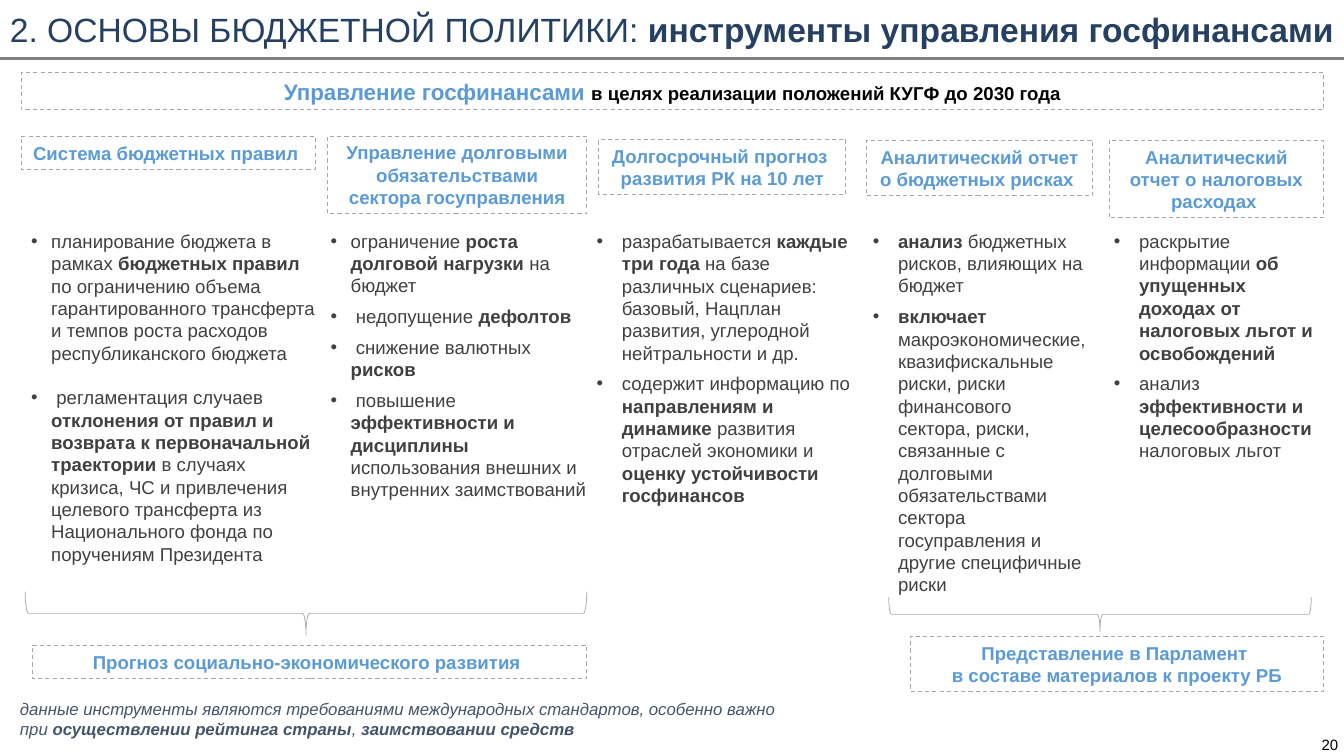
import pptx
import pptx.util
import pptx.dml.color
import pptx.enum.dml
import pptx.enum.shapes
import pptx.enum.text
import pptx.oxml.ns
from dataclasses import dataclass
from lxml import etree

SCALE = 9144
SHAPE = pptx.enum.shapes.MSO_SHAPE
ALIGN = pptx.enum.text.PP_ALIGN
ANCHOR = pptx.enum.text.MSO_ANCHOR


@dataclass(frozen=True)
class Theme:
    font: str = "Arial"
    navy: str = "254061"
    blue: str = "5B9BD5"
    gray: str = "404040"
    slate: str = "44546A"
    black: str = "000000"
    white: str = "FFFFFF"
    edge: str = "A6A6A6"
    rule: str = "808080"
    title: float = 24
    lead: float = 16
    body: float = 13.3
    note: float = 12
    page: float = 10.7


THEME = Theme()


def px(count):
    return pptx.util.Emu(count * SCALE)


def place(box):
    return [px(side) for side in box]


def rgb(code):
    return pptx.dml.color.RGBColor.from_string(code)


def bullet(para, indent):
    props = para._p.get_or_add_pPr()
    props.set("marL", str(px(indent)))
    props.set("indent", str(-px(indent)))
    tag = pptx.oxml.ns.qn
    tint = etree.SubElement(props, tag("a:buClr"))
    etree.SubElement(tint, tag("a:srgbClr"), val=THEME.gray)
    etree.SubElement(props, tag("a:buFont"), typeface=THEME.font)
    etree.SubElement(props, tag("a:buChar"), char="•")


def write(shape, lines, size=THEME.body, color=THEME.gray, bold=False,
          italic=False, align=ALIGN.LEFT, anchor=ANCHOR.TOP, after=0,
          lead=None, indent=0, mark=None):
    """Lines are paragraphs; parts between asterisks take the mark format."""
    frame = shape.text_frame
    frame.word_wrap = True
    frame.vertical_anchor = anchor
    base = dict(size=size, color=color, bold=bold)
    other = {**base, **(mark or {"bold": True})}
    for place_no, line in enumerate(lines):
        para = frame.add_paragraph() if place_no else frame.paragraphs[0]
        para.alignment = align
        para.space_after = pptx.util.Pt(after)
        if lead:
            para.line_spacing = lead
        if indent:
            bullet(para, indent)
        for part_no, part in enumerate(line.split("*")):
            if not part:
                continue
            look = other if part_no % 2 else base
            run = para.add_run()
            run.text = part
            run.font.name = THEME.font
            run.font.size = pptx.util.Pt(look["size"])
            run.font.bold = look["bold"]
            run.font.italic = italic
            run.font.color.rgb = rgb(look["color"])


def label(slide, box, lines, **form):
    write(slide.shapes.add_textbox(*place(box)), lines, **form)


def outline(shape, width):
    shape.shadow.inherit = False
    shape.line.color.rgb = rgb(THEME.edge)
    shape.line.width = pptx.util.Pt(width)


def frame(slide, box, lines, **form):
    shape = slide.shapes.add_shape(SHAPE.RECTANGLE, *place(box))
    outline(shape, 0.75)
    shape.line.dash_style = pptx.enum.dml.MSO_LINE.DASH
    shape.fill.solid()
    shape.fill.fore_color.rgb = rgb(THEME.white)
    write(shape, lines, color=THEME.blue, bold=True, align=ALIGN.CENTER,
          anchor=ANCHOR.MIDDLE, **form)


def brace(slide, box):
    left, top, width, height = box
    shift = (width - height) / 2
    turned = (round(left + shift), round(top - shift), height, width)
    shape = slide.shapes.add_shape(SHAPE.LEFT_BRACE, *place(turned))
    shape.rotation = 270
    shape.adjustments[0] = 0.08
    shape.fill.background()
    outline(shape, 0.5)


def header(slide, box):
    left, top, width, height = box
    label(slide, (left, top + 8, width, 46),
          ["2. ОСНОВЫ БЮДЖЕТНОЙ ПОЛИТИКИ: *инструменты управления госфинансами*"],
          size=THEME.title, color=THEME.navy, lead=0.9, after=2.7)
    base = top + height
    rule = slide.shapes.add_connector(
        pptx.enum.shapes.MSO_CONNECTOR.STRAIGHT,
        *place((left, base, left + width, base)))
    rule.line.color.rgb = rgb(THEME.rule)
    rule.line.width = pptx.util.Pt(2.25)
    etree.SubElement(rule._element.spPr, pptx.oxml.ns.qn("a:effectLst"))


def column(slide, box, head, body, lines, indent=25, after=6):
    left, top, width, height = box
    frame(slide, box, head)
    start, span, tall = body
    label(slide, (start, 223, span, tall), lines, indent=indent, after=after)


def result(slide, box, arch, lines):
    brace(slide, arch)
    frame(slide, box, lines)


def footer(slide, box):
    left, top, width, height = box
    label(slide, (left + 10, top, width - 20, 50),
          ["данные инструменты являются требованиями международных стандартов, особенно важно",
           "при *осуществлении рейтинга страны*, *заимствовании средств*"],
          size=THEME.note, color=THEME.slate, italic=True)
    label(slide, (left + width - 41, top + 39, 54, 24), ["20"],
          size=THEME.page, color=THEME.black, align=ALIGN.CENTER,
          anchor=ANCHOR.MIDDLE)


COLUMNS = [
    dict(box=(21, 135, 292, 33), head=["Система бюджетных правил "],
         body=(21, 304, 348), indent=20, after=16,
         lines=["планирование бюджета в рамках *бюджетных правил *по ограничению объема гарантированного трансферта и темпов роста расходов республиканского бюджета",
                " регламентация случаев *отклонения от правил и возврата к первоначальной траектории* в случаях кризиса, ЧС и привлечения целевого трансферта из Национального фонда по поручениям Президента"]),
    dict(box=(325, 135, 257, 77),
         head=["Управление долговыми обязательствами сектора госуправления"],
         body=(318, 276, 283), indent=20,
         lines=["ограничение *роста долговой нагрузки *на бюджет",
                " недопущение *дефолтов*",
                " снижение валютных *рисков*",
                " повышение *эффективности и дисциплины *использования внешних и внутренних заимствований"]),
    dict(box=(594, 138, 245, 55),
         head=["Долгосрочный прогноз ", "развития РК на 10 лет"],
         body=(582, 281, 288),
         lines=["разрабатывается *каждые три года *на базе различных сценариев: базовый, Нацплан развития, углеродной нейтральности и др.",
                "содержит информацию по *направлениям и динамике *развития отраслей экономики и *оценку устойчивости госфинансов*"]),
    dict(box=(859, 139, 225, 55),
         head=["Аналитический отчет о бюджетных рисках "],
         body=(856, 234, 377),
         lines=["*анализ* бюджетных рисков, влияющих на бюджет",
                "*включает* макроэкономические, квазифискальные риски, риски финансового сектора, риски, связанные с долговыми обязательствами сектора госуправления и другие специфичные риски"]),
    dict(box=(1100, 139, 213, 77),
         head=["Аналитический отчет о налоговых расходах "],
         body=(1095, 223, 243),
         lines=["раскрытие информации *об упущенных доходах от налоговых льгот и освобождений*",
                "анализ *эффективности и целесообразности *налоговых льгот"]),
]


def main():
    deck = pptx.Presentation()
    deck.slide_width, deck.slide_height = px(1333), px(750)
    slide = deck.slides.add_slide(deck.slide_layouts[6])
    header(slide, (0, 0, 1333, 58))
    frame(slide, (21, 72, 1292, 37),
          ["Управление госфинансами *в целях реализации положений КУГФ до 2030 года*"],
          size=THEME.lead, mark=dict(size=THEME.body, color=THEME.black))
    for item in COLUMNS:
        column(slide, **item)
    result(slide, (32, 640, 550, 33), (25, 587, 557, 43),
           ["Прогноз социально-экономического развития "])
    result(slide, (903, 631, 410, 55), (881, 592, 419, 34),
           ["Представление в Парламент ", "в составе материалов к проекту РБ"])
    footer(slide, (0, 688, 1333, 62))
    deck.save("out.pptx")


if __name__ == "__main__":
    main()
